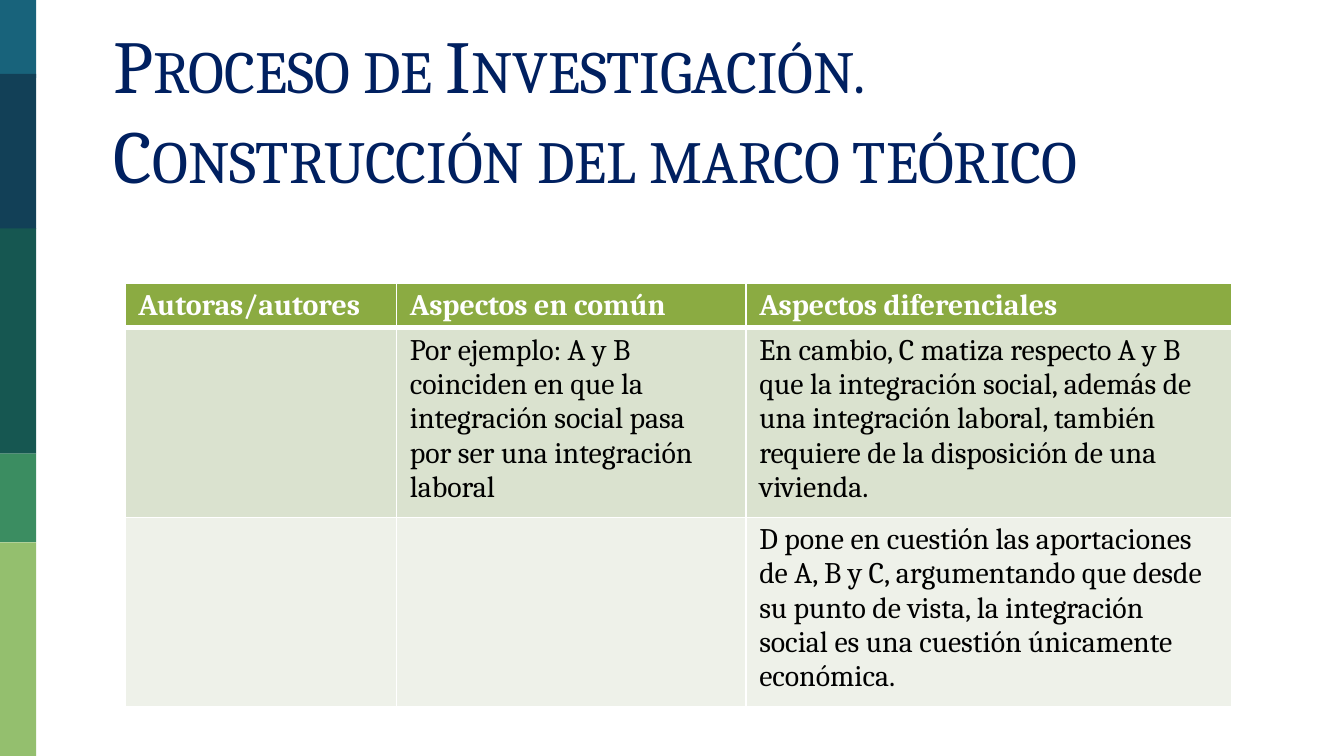
"""Builds a slide with a title, a side band and a table comparing authors."""
from lxml import etree
from pptx import Presentation
from pptx import util as u
from pptx.dml.color import RGBColor
from pptx.enum import shapes, text
from pptx.oxml.ns import qn

PX = 4572
WHITE = RGBColor(0xFF, 0xFF, 0xFF)
BLACK = RGBColor(0, 0, 0)
NAVY = RGBColor(0x00, 0x20, 0x60)
HEADER_GREEN = RGBColor(0x8B, 0xAB, 0x42)
ROW_FILLS = (HEADER_GREEN, RGBColor(0xDA, 0xE2, 0xCF), RGBColor(0xEE, 0xF1, 0xE9))
BAND = (
    (0, 116, RGBColor(0x18, 0x63, 0x7B)),
    (110, 231, RGBColor(0x12, 0x40, 0x57)),
    (340, 335, RGBColor(0x16, 0x57, 0x51)),
    (675, 132, RGBColor(0x3B, 0x8D, 0x61)),
    (807, 318, RGBColor(0x94, 0xBF, 0x6E)),
)
ROWS = (
    ("Autoras/autores", "Aspectos en común", "Aspectos diferenciales"),
    ("",
     "Por ejemplo: A y B coinciden en que la integración social pasa por ser "
     "una integración laboral",
     "En cambio, C matiza respecto A y B que la integración social, además de "
     "una integración laboral, también requiere de la disposición de una vivienda."),
    ("", "",
     "D pone en cuestión las aportaciones de A, B y C, argumentando que desde "
     "su punto de vista, la integración social es una cuestión únicamente económica."),
)


def px(length):
    return u.Emu(length * PX)


def write(frame, words, size=16, color=BLACK, bold=False, small_caps=False, before=0):
    paragraph = frame.paragraphs[0]
    paragraph.space_before = u.Pt(before)
    run = paragraph.add_run()
    run.text = words
    font = run.font
    font.name, font.size, font.bold = "Cambria", u.Pt(size), bold
    font.color.rgb = color
    if small_caps:
        run.font._element.set("cap", "small")


def set_borders(cell, color, bottom):
    properties = cell._tc.get_or_add_tcPr()
    for index, side in enumerate("LRTB"):
        line = etree.Element(qn(f"a:ln{side}"), w=str(u.Pt(bottom if side == "B" else 1)))
        fill = etree.SubElement(line, qn("a:solidFill"))
        etree.SubElement(fill, qn("a:srgbClr"), val=str(color))
        properties.insert(index, line)


class SlideBuilder:
    def __init__(self, slide):
        self.slide = slide

    def bar(self, left, top, width, height, color):
        shape = self.slide.shapes.add_shape(
            shapes.MSO_SHAPE.RECTANGLE, px(left), px(top), px(width), px(height))
        shape.shadow.inherit = False
        shape.fill.solid()
        shape.fill.fore_color.rgb = color
        shape.line.fill.background()

    def title(self, left, top, width, height, words):
        frame = self.slide.shapes.add_textbox(
            px(left), px(top), px(width), px(height)).text_frame
        frame.word_wrap = True
        frame.vertical_anchor = text.MSO_ANCHOR.TOP
        frame.margin_left = frame.margin_right = px(20)
        frame.margin_top = frame.margin_bottom = px(20)
        write(frame, words, size=40, color=NAVY, small_caps=True, before=6)

    def table(self, left, top, widths, heights, rows):
        table = self.slide.shapes.add_table(
            len(rows), len(widths), px(left), px(top),
            px(sum(widths)), px(sum(heights))).table
        for column, width in zip(table.columns, widths):
            column.width = px(width)
        for row, height in zip(table.rows, heights):
            row.height = px(height)
        for row_index, row in enumerate(rows):
            header = row_index == 0
            for column_index, words in enumerate(row):
                cell = table.cell(row_index, column_index)
                cell.margin_left = cell.margin_right = px(20)
                cell.margin_top = cell.margin_bottom = px(8)
                cell.fill.solid()
                cell.fill.fore_color.rgb = ROW_FILLS[row_index]
                set_borders(cell, WHITE, bottom=3 if header else 1)
                if words:
                    write(cell.text_frame, words, bold=header,
                          color=WHITE if header else BLACK)


def main():
    presentation = Presentation()
    presentation.slide_width, presentation.slide_height = px(2000), px(1125)
    builder = SlideBuilder(presentation.slides.add_slide(presentation.slide_layouts[6]))
    for top, height, color in BAND:
        builder.bar(0, top, 54, height, color)
    builder.table(186, 421, (404, 520, 723), (67, 282, 282), ROWS)
    builder.title(150, 8, 1686, 114,
                  "Proceso de Investigación. Construcción del marco teórico")
    presentation.save("out.pptx")


if __name__ == "__main__":
    main()
